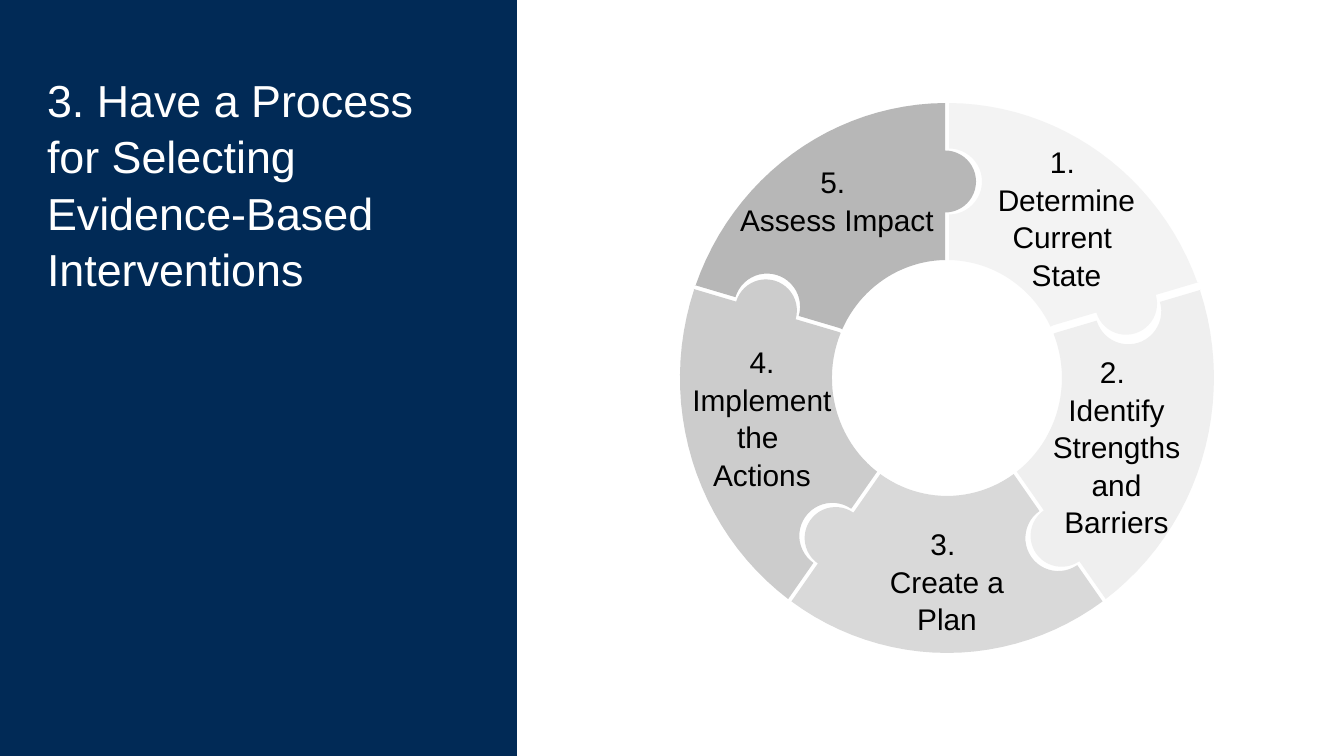
from math import atan2, cos, hypot, pi, sin

from pptx import Presentation
from pptx.dml.color import RGBColor
from pptx.enum.shapes import MSO_SHAPE
from pptx.enum.text import PP_ALIGN
from pptx.util import Emu, Pt

EMU_PER_PX = 914400 / 134.4
FONT = "Arial"
COLORS = {
    "navy": "012A56",
    "white": "FFFFFF",
    "black": "000000",
    "determine": "F3F3F3",
    "identify": "EFEFEF",
    "create": "D9D9D9",
    "implement": "CCCCCC",
    "assess": "B7B7B7",
}

# Ring geometry, measured from the centre of the ring
OUTER_RADII = (267, 275)
INNER_RADII = (115, 118)
KNOB_RADIUS = 31
SOCKET_RADIUS = 33
ARC_STEPS = 24

# Clockwise seams: inner end, outer end, gap before, gap after
SEAMS = [
    ((0, -118), (0, -275), 2, 2),
    ((108, -48), (253, -91), 5, 3),
    ((69, 96), (157, 222), 2, 2),
    ((-69, 96), (-157, 222), 2, 2),
    ((-108, -48), (-253, -91), 2, 2),
]

# Clockwise steps: colour, label box relative to the ring, label lines
STEPS = [
    ("determine", (269, 34, 235, 106), ["1. ", "Determine Current ", "State"]),
    ("identify", (347, 244, 179, 138), ["2. ", "Identify Strengths and Barriers"]),
    ("create", (161, 416, 212, 79), ["3. ", "Create a", "Plan"]),
    ("implement", (-16, 234, 196, 169), ["4.", "Implement", "the ", "Actions"]),
    ("assess", (48, 54, 218, 79), ["5. ", "Assess Impact"]),
]


def px(length):
    return Emu(round(length * EMU_PER_PX))


def color(name):
    return RGBColor.from_string(COLORS[name])


def paint(shape, name):
    shape.shadow.inherit = False
    shape.fill.solid()
    shape.fill.fore_color.rgb = color(name)
    shape.line.fill.background()


def add_text(slide, box, lines, size, ink, align, insets):
    frame = slide.shapes.add_textbox(*map(px, box)).text_frame
    frame.word_wrap = True
    frame.margin_left = frame.margin_right = px(insets[0])
    frame.margin_top = frame.margin_bottom = px(insets[1])
    frame.text = "\n".join(lines)
    for paragraph in frame.paragraphs:
        paragraph.alignment = align
        paragraph.line_spacing = 1.05
        for run in paragraph.runs:
            run.font.name = FONT
            run.font.size = Pt(size)
            run.font.color.rgb = color(ink)


def arc(center, radii, start, end):
    """Points along an ellipse, clockwise when end is above start."""
    angles = [start + (end - start) * i / ARC_STEPS for i in range(ARC_STEPS + 1)]
    return [(center[0] + radii[0] * cos(a), center[1] + radii[1] * sin(a))
            for a in angles]


def seam_edge(seam, shift, radius):
    """One side of a seam from inner to outer end, with its half-round bulge."""
    (x1, y1), (x2, y2) = seam[:2]
    length = hypot(x2 - x1, y2 - y1)
    dx, dy = -(y2 - y1) / length * shift, (x2 - x1) / length * shift
    inner, outer = (x1 + dx, y1 + dy), (x2 + dx, y2 + dy)
    middle = ((inner[0] + outer[0]) / 2, (inner[1] + outer[1]) / 2)
    outward = atan2(y2 - y1, x2 - x1)
    bulge = arc(middle, (radius, radius), outward + pi, outward)
    return [inner, *bulge, outer]


def ring_arc(radii, first, last):
    """Clockwise part of the ring's rim between two points."""
    start, end = (atan2(y / radii[1], x / radii[0]) for x, y in (first, last))
    return arc((0, 0), radii, start, end if end > start else end + 2 * pi)


def add_piece(slide, center, before, after, fill):
    socket = seam_edge(before, before[3], SOCKET_RADIUS)
    knob = seam_edge(after, -after[2], KNOB_RADIUS)
    outline = (socket
               + ring_arc(OUTER_RADII, socket[-1], knob[-1])
               + knob[::-1]
               + ring_arc(INNER_RADII, socket[0], knob[0])[::-1])
    points = [(px(center[0] + x), px(center[1] + y)) for x, y in outline]
    builder = slide.shapes.build_freeform(*points[0])
    builder.add_line_segments(points[1:], close=True)
    paint(builder.convert_to_shape(), fill)


def add_title_panel(slide, box):
    left, top, width, height = box
    panel = slide.shapes.add_shape(MSO_SHAPE.RECTANGLE, *map(px, box))
    paint(panel, "navy")
    add_text(slide, (left + 37, top + 57, 448, 146),
             ["3. Have a Process for Selecting Evidence-Based Interventions"],
             24, "white", PP_ALIGN.LEFT, (13, 13))


def add_process_ring(slide, box):
    left, top, width, height = box
    center = (left + width / 2, top + height / 2)
    # Puzzle pieces
    for i, (fill, _, _) in enumerate(STEPS):
        add_piece(slide, center, SEAMS[i], SEAMS[(i + 1) % len(SEAMS)], fill)
    # Step labels
    for _, (x, y, label_width, label_height), lines in STEPS:
        add_text(slide, (left + x, top + y, label_width, label_height),
                 lines, 16, "black", PP_ALIGN.CENTER, (9, 5))


def main():
    prs = Presentation()
    prs.slide_width, prs.slide_height = px(1344), px(756)
    slide = prs.slides.add_slide(prs.slide_layouts[6])
    add_title_panel(slide, (-3, 0, 520, 756))
    add_process_ring(slide, (680, 103, 534, 550))
    prs.save("out.pptx")


if __name__ == "__main__":
    main()
